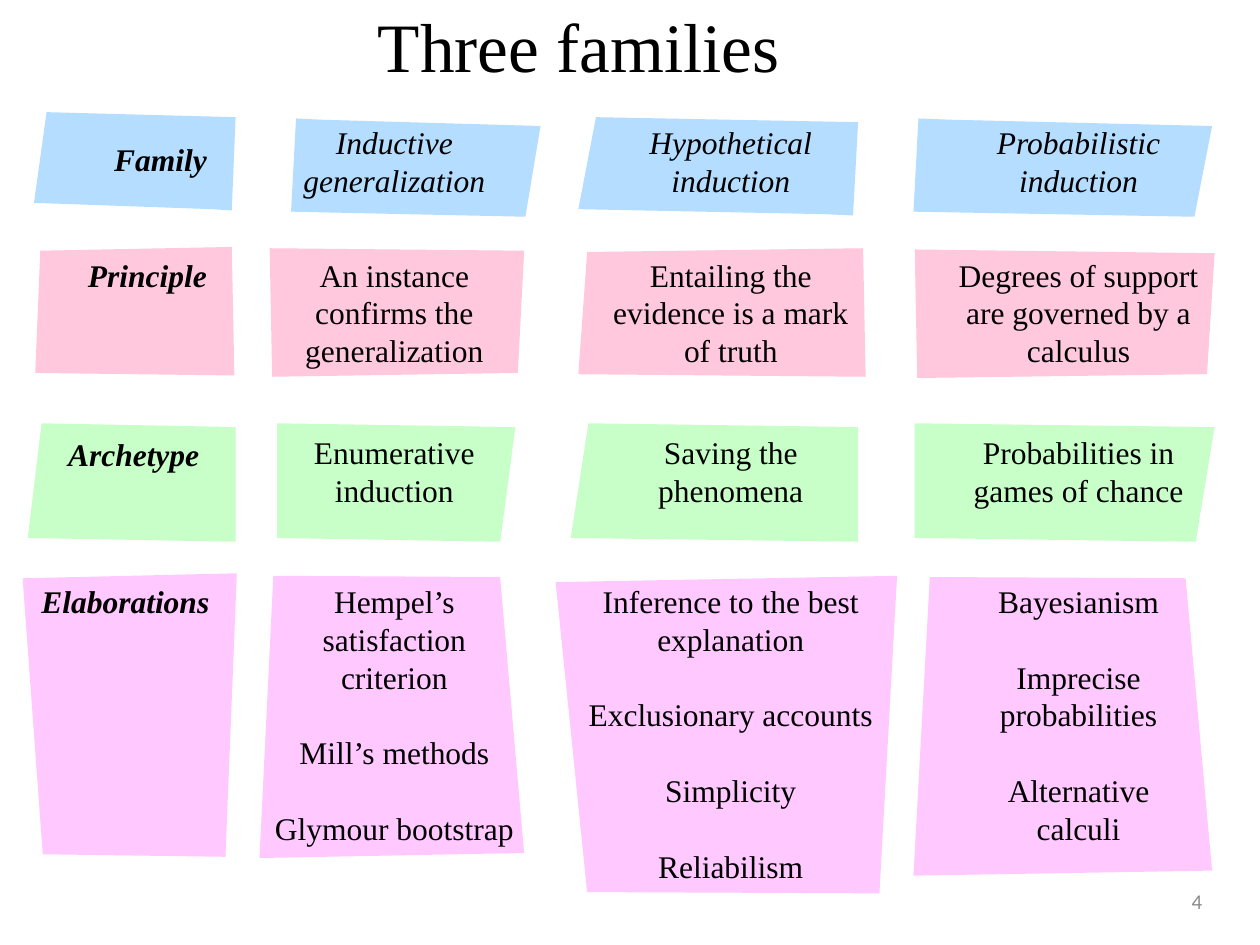
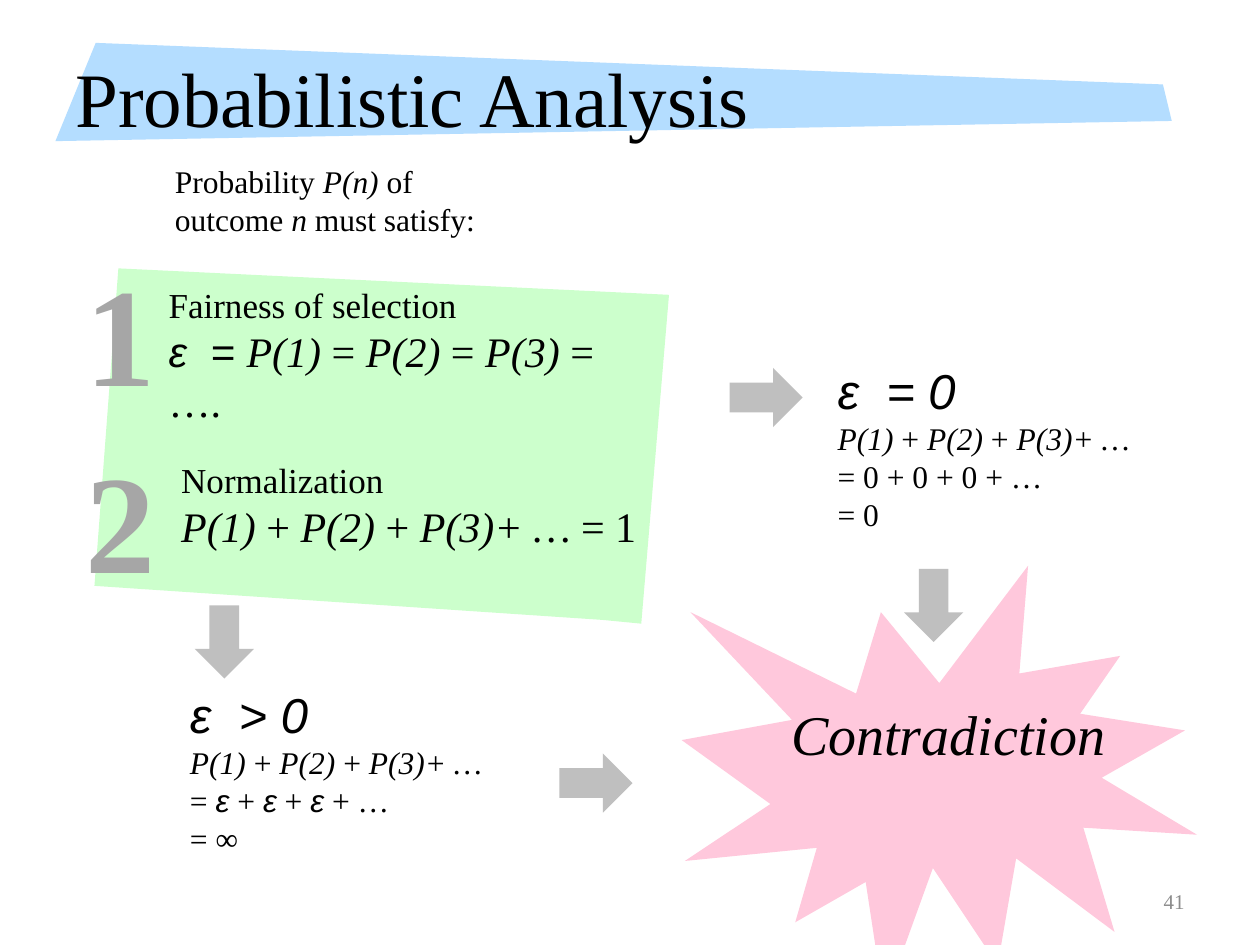
from pptx import Presentation
from pptx.dml.color import RGBColor
from pptx.enum import shapes, text
from pptx.util import Inches, Pt

BLUE, PINK, GREEN, VIOLET = "B4DDFF", "FFC8DC", "C8FFC8", "FFC8FF"
MINT, ARROW_GRAY, NUMERAL_GRAY, FOOTER_GRAY = "CCFFCC", "BFBFBF", "A6A6A6", "8C8C8C"
LEFT, CENTER, RIGHT = text.PP_ALIGN.LEFT, text.PP_ALIGN.CENTER, text.PP_ALIGN.RIGHT
COLUMN_CENTERS = (3.13, 5.8, 8.56)

FAMILY_ROWS = [
    {
        "color": BLUE, "label": ("*Family*", 1.74, 1.06),
        "top": 0.93, "height": 0.71, "widths": (2.15, 2.15, 2.15),
        "outlines": [
            [(0.37, 0.89), (1.87, 0.93), (1.84, 1.67), (1.68, 1.66), (0.27, 1.61)],
            [(4.17, 1.72), (2.31, 1.68), (2.35, 0.94), (2.55, 0.95), (4.29, 1)],
            [(4.73, 0.93), (6.81, 0.97), (6.77, 1.71), (6.54, 1.7), (4.59, 1.66)],
            [(9.48, 1.72), (7.25, 1.68), (7.29, 0.94), (7.54, 0.95), (9.62, 1)],
        ],
        "cells": [["*Inductive generalization*"], ["*Hypothetical induction*"],
                  ["*Probabilistic*", "*induction*"]],
    },
    {
        "color": PINK, "label": ("*Principle*", 1.74, 1.98),
        "top": 1.98, "height": 1.01, "widths": (2.15, 2.15, 2.12),
        "outlines": [
            [(0.32, 1.99), (1.84, 1.96), (1.86, 2.98), (0.28, 2.96)],
            [(4.11, 2.96), (2.16, 2.99), (2.14, 1.97), (4.16, 1.99)],
            [(4.66, 2), (6.85, 1.97), (6.87, 2.99), (4.59, 2.97)],
            [(9.58, 2.97), (7.28, 3), (7.26, 1.98), (9.64, 2.01)],
        ],
        "cells": [["An instance confirms the generalization"],
                  ["Entailing the evidence is a mark of truth"],
                  ["Degrees of support are governed by a calculus"]],
    },
    {
        "color": GREEN, "label": ("*Archetype*", 1.68, 3.4),
        "top": 3.39, "height": 0.71, "widths": (1.55, 1.55, 1.89),
        "outlines": [
            [(0.33, 3.36), (1.87, 3.39), (1.87, 4.3), (0.22, 4.27)],
            [(3.97, 4.3), (2.2, 4.27), (2.2, 3.36), (4.09, 3.39)],
            [(4.67, 3.36), (6.81, 3.39), (6.81, 4.3), (4.53, 4.27)],
            [(9.49, 4.3), (7.26, 4.27), (7.26, 3.36), (9.64, 3.39)],
        ],
        "cells": [["Enumerative induction"], ["Saving the phenomena"],
                  ["Probabilities in games of chance"]],
    },
    {
        "color": VIOLET, "label": ("*Elaborations*", 1.76, 4.57),
        "top": 4.57, "height": 2.22, "widths": (2.15, 2.64, 1.89), "gap": 21.6,
        "outlines": [
            [(0.18, 4.59), (1.88, 4.55), (1.79, 6.8), (0.34, 6.78)],
            [(4.16, 6.77), (2.06, 6.81), (2.17, 4.57), (3.97, 4.58)],
            [(4.41, 4.62), (7.12, 4.57), (6.98, 7.09), (4.66, 7.08)],
            [(9.62, 6.91), (7.25, 6.95), (7.38, 4.58), (9.41, 4.59)],
        ],
        "cells": [
            ["Hempel’s satisfaction criterion", "Mill’s methods", "Glymour bootstrap"],
            ["Inference to the best explanation", "Exclusionary accounts", "Simplicity",
             "Reliabilism"],
            ["Bayesianism", "Imprecise probabilities", "Alternative calculi"],
        ],
    },
]


def rgb(value):
    """Turn a hex string into a colour."""
    return RGBColor.from_string(value)


class Deck:
    """Holds the presentation, its text style and the current slide."""

    font = "Times New Roman"
    symbol_font = "Arial"
    ink = "000000"

    def __init__(self):
        """Start an empty 10 by 7.5 inch presentation."""
        self.presentation = Presentation()
        self.presentation.slide_width = Inches(10)
        self.presentation.slide_height = Inches(7.5)
        self.slide = None

    def add_slide(self):
        """Add a blank slide and make it current."""
        self.slide = self.presentation.slides.add_slide(self.presentation.slide_layouts[6])

    def paint(self, shape, color):
        """Give a shape a flat fill without line or shadow."""
        shape.shadow.inherit = False
        shape.fill.solid()
        shape.fill.fore_color.rgb = rgb(color)
        shape.line.fill.background()

    def panel(self, points, color):
        """Draw a closed polygon through the given points."""
        corners = [(Inches(x), Inches(y)) for x, y in points]
        builder = self.slide.shapes.build_freeform(*corners[0])
        builder.add_line_segments(corners[1:], close=True)
        self.paint(builder.convert_to_shape(), color)

    def preset(self, kind, box, color, rotation=0):
        """Draw a preset shape."""
        shape = self.slide.shapes.add_shape(kind, *map(Inches, box))
        shape.rotation = rotation
        self.paint(shape, color)

    def arrow(self, left, top, rotation=0):
        """Draw a gray block arrow."""
        self.preset(shapes.MSO_SHAPE.RIGHT_ARROW, (left, top, 0.58, 0.47), ARROW_GRAY, rotation)

    def add_text(self, box, lines, size=18, align=LEFT, color=ink, font=font, bold=False,
                 gap=0, anchor=text.MSO_ANCHOR.TOP):
        """Add lines, or (line, size) pairs, with asterisks around italics."""
        frame = self.slide.shapes.add_textbox(*map(Inches, box)).text_frame
        frame.word_wrap = True
        frame.vertical_anchor = anchor
        for index, line in enumerate(lines):
            markup, line_size = line if isinstance(line, tuple) else (line, size)
            paragraph = frame.add_paragraph() if index else frame.paragraphs[0]
            paragraph.alignment = align
            if index:
                paragraph.space_before = Pt(gap)
            for position, part in enumerate(markup.split("*")):
                if part:
                    run = paragraph.add_run()
                    run.text = part
                    run.font.name = self.symbol_font if part.startswith("ε") else font
                    run.font.size = Pt(line_size)
                    run.font.italic = position % 2 == 1
                    run.font.bold = bold
                    run.font.color.rgb = rgb(color)

    def title(self, box, words, size, align=LEFT):
        """Add the slide title."""
        self.add_text(box, [words], size, align, anchor=text.MSO_ANCHOR.MIDDLE)

    def page_number(self, number, right, font=font):
        """Add the page number up to the given right edge."""
        self.add_text((right - 2.33, 6.95, 2.33, 0.4), [number], 12, RIGHT, FOOTER_GRAY, font,
                      anchor=text.MSO_ANCHOR.MIDDLE)


def add_families(deck):
    """Build the grid of three families."""
    deck.add_slide()
    deck.title((2.68, 0.09, 3.83, 0.53), "Three families", 39.6, CENTER)
    for row in FAMILY_ROWS:
        for outline in row["outlines"]:
            deck.panel(outline, row["color"])
        label, right, top = row["label"]
        deck.add_text((right - 1.62, top, 1.62, 0.4), [label], align=RIGHT, bold=True)
        for center, width, lines in zip(COLUMN_CENTERS, row["widths"], row["cells"]):
            deck.add_text((center - width / 2, row["top"], width, row["height"]), lines,
                          align=CENTER, gap=row.get("gap", 0))
    deck.page_number("4", 9.64, "Calibri")


def add_analysis(deck):
    """Build the argument that leads to a contradiction."""
    total = "*P(1)* + *P(2)* + *P(3)+ …*"
    deck.add_slide()
    deck.panel([(0.94, 2.13), (5.31, 2.34), (5.09, 4.95), (4.78, 4.92), (0.75, 4.65)], MINT)
    deck.panel([(0.76, 0.34), (9.23, 0.67), (9.3, 0.96), (0.44, 1.12)], BLUE)
    deck.title((0.5, 0.3, 8.37, 0.94), "Probabilistic Analysis", 44)
    deck.add_text((1.29, 1.24, 2.69, 0.71), ["Probability *P(n)* of outcome *n* must satisfy:"])
    deck.add_text((1.24, 2.2, 3.97, 0.84),
                  ["Fairness of selection", ("*ε  = **P(1)* = *P(2)* = *P(3)* = ….", 24)], 20)
    deck.add_text((1.34, 3.59, 3.87, 0.84), ["Normalization", (total + " = 1", 24)], 20)
    for numeral, top in (("1", 1.91), ("2", 3.39)):
        deck.add_text((0.58, top, 0.76, 1.45), [numeral], 80, color=NUMERAL_GRAY, bold=True)
    deck.add_text((6.55, 2.81, 2.57, 1.48),
                  [("*ε  = 0*", 28), total, "= 0 + 0 + 0 + …", "= 0"])
    deck.add_text((1.41, 5.38, 2.57, 1.48),
                  [("*ε  > 0*", 28), total, "= *ε* + *ε* + *ε* + …", "= ∞"])
    deck.preset(shapes.MSO_SHAPE.EXPLOSION1, (5.41, 4.49, 4.09, 3.47), PINK)
    deck.add_text((6.18, 5.5, 2.84, 0.64), ["*Contradiction*"], 32)
    for left, top, rotation in ((5.79, 2.92, 0), (1.49, 4.86, 90), (4.44, 5.98, 0),
                                (7.12, 4.57, 90)):
        deck.arrow(left, top, rotation)
    deck.page_number("41", 9.5)


def main():
    """Build and save both slides."""
    deck = Deck()
    add_families(deck)
    add_analysis(deck)
    deck.presentation.save("out.pptx")


if __name__ == "__main__":
    main()
